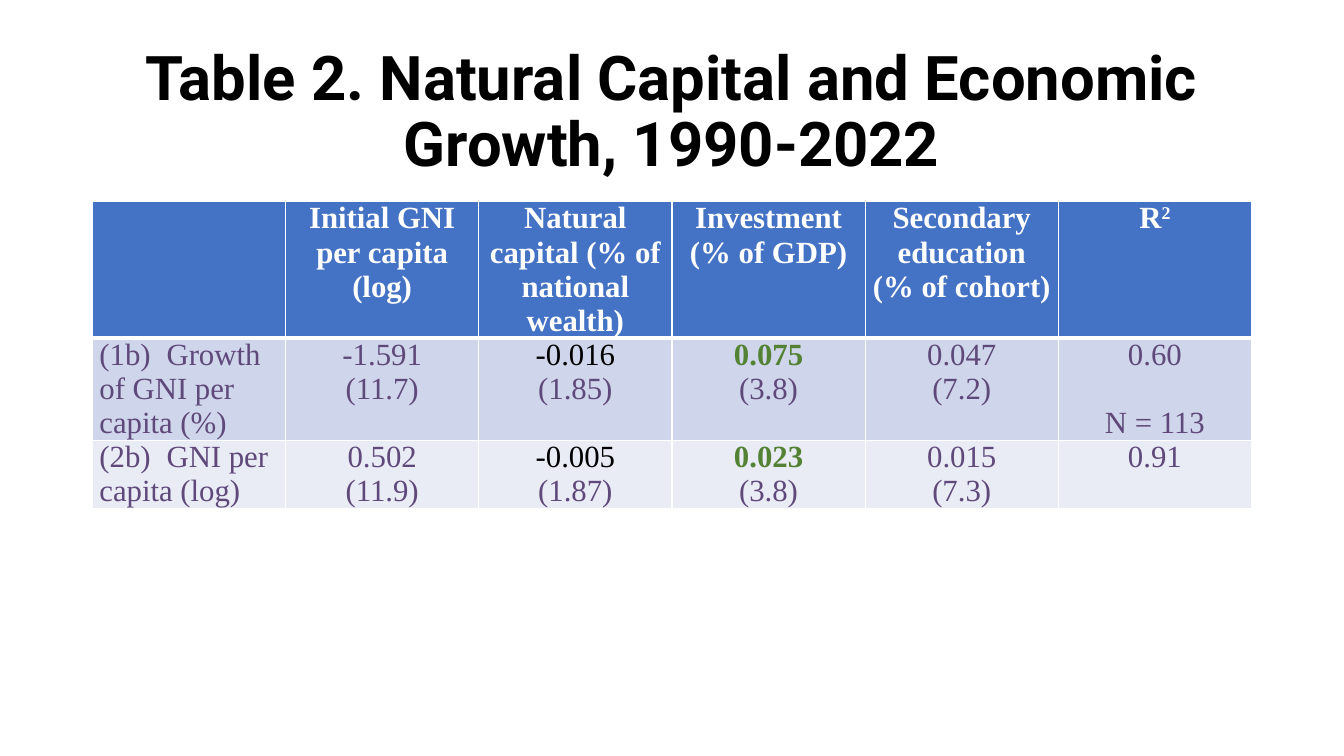
from dataclasses import dataclass

from lxml import etree
from pptx import Presentation
from pptx.dml.color import RGBColor
from pptx.enum.text import MSO_ANCHOR, MSO_AUTO_SIZE, PP_ALIGN
from pptx.oxml.ns import qn
from pptx.util import Inches, Length, Pt

CENTER, LEFT = PP_ALIGN.CENTER, PP_ALIGN.LEFT
MIDDLE = MSO_ANCHOR.MIDDLE
FIXED = MSO_AUTO_SIZE.NONE


@dataclass(frozen=True)
class Theme:
    black: str = "000000"
    white: str = "FFFFFF"
    blue: str = "4472C4"
    purple: str = "5F497A"
    green: str = "548235"
    bands: tuple[str, ...] = ("4472C4", "CFD5EA", "E9EBF5")
    head_font: str = "Roboto"
    cell_font: str = "Times New Roman"
    head_size: float = 44
    cell_size: float = 22
    thin: float = 1
    thick: float = 3


@dataclass(frozen=True)
class Grid:
    cols: int = 160
    rows: int = 90
    unit: int = Inches(1) // 12

    def span(self, count: float) -> Length:
        return Length(round(count * self.unit))


@dataclass(frozen=True)
class Line:
    text: str
    ink: str
    bold: bool = False
    raised: str = ""
    gap: float = 0
    align: PP_ALIGN = CENTER


THEME = Theme()
GRID = Grid()
MARGIN, WIDTH = 11, 138
HEIGHTS = (16.2, 12.2, 8.1)


def head(*texts: str, raised: str = "") -> list[Line]:
    return [Line(text, THEME.white, True, raised) for text in texts]


def label(text: str) -> list[Line]:
    return [Line(text, THEME.purple, align=LEFT)]


def pair(value: str, ratio: str, ink: str = THEME.purple, bold: bool = False) -> list[Line]:
    return [Line(value, ink, bold), Line(ratio, THEME.purple)]


ROWS = [
    [
        [],
        head("Initial GNI per capita (log)"),
        head("Natural capital (% of national wealth)"),
        head("Investment (% of GDP)"),
        head("Secondary education", "(% of cohort)"),
        head("R", raised="2"),
    ],
    [
        label("(1b)\tGrowth of GNI per capita (%)"),
        pair("-1.591", "(11.7)"),
        pair("-0.016", "(1.85)", THEME.black),
        pair("0.075", "(3.8)", THEME.green, True),
        pair("0.047", "(7.2)"),
        [Line("0.60", THEME.purple), Line("N = 113", THEME.purple, gap=24.3)],
    ],
    [
        label("(2b)\tGNI per capita (log)"),
        pair("0.502", "(11.9)"),
        pair("-0.005", "(1.87)", THEME.black),
        pair("0.023", "(3.8)", THEME.green, True),
        pair("0.015", "(7.3)"),
        [Line("0.91", THEME.purple)],
    ],
]


def style(font, name: str, size: float, ink: str, bold: bool) -> None:
    font.name = name
    font.size = Pt(size)
    font.bold = bold
    font.color.rgb = RGBColor.from_string(ink)


def add_tab(para, stop: Length) -> None:
    tabs = etree.SubElement(para._p.get_or_add_pPr(), qn("a:tabLst"))
    etree.SubElement(tabs, qn("a:tab"), pos=str(stop), algn="l")


def write(para, line: Line) -> None:
    para.text = line.text
    para.alignment = line.align
    if line.gap:
        para.space_before = Pt(line.gap)
    if "\t" in line.text:
        add_tab(para, GRID.span(8))
    if line.raised:
        run = para.add_run()
        run.text = line.raised
        run._r.get_or_add_rPr().set("baseline", "30000")
    for run in para.runs:
        style(run.font, THEME.cell_font, THEME.cell_size, line.ink, line.bold)


def add_edges(cell, widths: dict[str, float]) -> None:
    props = cell._tc.get_or_add_tcPr()
    for side, width in widths.items():
        edge = etree.SubElement(props, qn(f"a:ln{side}"), w=str(Pt(width)))
        fill = etree.SubElement(edge, qn("a:solidFill"))
        etree.SubElement(fill, qn("a:srgbClr"), val=THEME.white)


def fill_cell(cell, lines: list[Line], row: int) -> None:
    cell.margin_left = cell.margin_right = Inches(0.07)
    cell.margin_top = cell.margin_bottom = 0
    top = THEME.thick if row == 1 else THEME.thin
    base = THEME.thick if row == 0 else THEME.thin
    add_edges(cell, {"L": THEME.thin, "R": THEME.thin, "T": top, "B": base})
    cell.fill.solid()
    cell.fill.fore_color.rgb = RGBColor.from_string(THEME.bands[row])
    frame = cell.text_frame
    for spot, line in enumerate(lines):
        write(frame.add_paragraph() if spot else frame.paragraphs[0], line)


def add_title(slide, text: str) -> None:
    title = slide.shapes.title
    title.left, title.top = GRID.span(MARGIN), GRID.span(4.8)
    title.width, title.height = GRID.span(WIDTH), GRID.span(17.4)
    frame = title.text_frame
    frame.text = text
    frame.word_wrap = True
    frame.auto_size = FIXED
    frame.vertical_anchor = MIDDLE
    para = frame.paragraphs[0]
    para.alignment = CENTER
    para.line_spacing = 0.9
    style(para.runs[0].font, THEME.head_font, THEME.head_size, THEME.black, True)


def add_grid(slide) -> None:
    table = slide.shapes.add_table(
        len(ROWS), len(ROWS[0]), GRID.span(MARGIN), GRID.span(24),
        GRID.span(WIDTH), GRID.span(sum(HEIGHTS)),
    ).table
    for row, cells in enumerate(ROWS):
        table.rows[row].height = GRID.span(HEIGHTS[row])
        for col, lines in enumerate(cells):
            fill_cell(table.cell(row, col), lines, row)


def main() -> None:
    deck = Presentation()
    deck.slide_width = GRID.span(GRID.cols)
    deck.slide_height = GRID.span(GRID.rows)
    slide = deck.slides.add_slide(deck.slide_layouts[5])
    add_title(slide, "Table 2. Natural Capital and Economic Growth, 1990-2022")
    add_grid(slide)
    deck.save("out.pptx")


if __name__ == "__main__":
    main()
